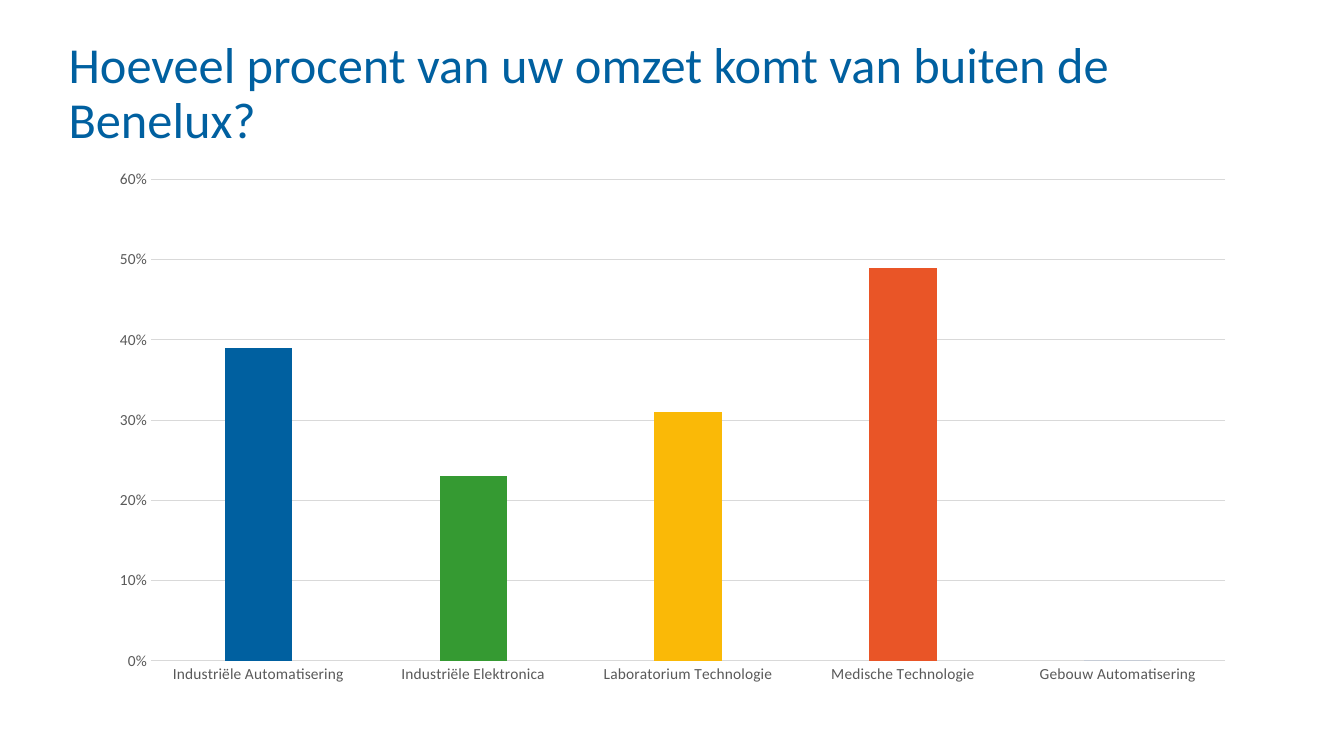
from dataclasses import dataclass
from typing import Optional

import pptx
import pptx.chart.data
import pptx.dml.color
import pptx.enum.chart
import pptx.enum.text
import pptx.util
from pptx.util import Inches


@dataclass(frozen=True)
class Theme:
    font: str = "Calibri"
    title_size: float = 36
    chart_size: float = 10
    axis_size: float = 11
    line_width: float = 0.75
    blue: str = "0060A0"
    green: str = "359A32"
    yellow: str = "FAB907"
    orange: str = "E95527"
    series: str = "4472C4"
    black: str = "000000"
    label: str = "595959"
    grid: str = "D9D9D9"


@dataclass(frozen=True)
class Market:
    name: str
    share: float
    color: Optional[str] = None


THEME = Theme()
MARKETS = [
    Market("Industriële Automatisering", 0.39, THEME.blue),
    Market("Industriële Elektronica", 0.23, THEME.green),
    Market("Laboratorium Technologie", 0.31, THEME.yellow),
    Market("Medische Technologie", 0.49, THEME.orange),
    Market("Gebouw Automatisering", 0),
]


def rgb(color: str) -> pptx.dml.color.RGBColor:
    return pptx.dml.color.RGBColor.from_string(color)


def format_font(font, *, size: float, color: str) -> None:
    font.name = THEME.font
    font.size = pptx.util.Pt(size)
    font.bold = False
    font.color.rgb = rgb(color)


def format_line(line) -> None:
    line.color.rgb = rgb(THEME.grid)
    line.width = pptx.util.Pt(THEME.line_width)


def set_text(tf, text: str, *, size: float, color: str, spacing: float = 1.0) -> None:
    tf.word_wrap = True
    tf.auto_size = pptx.enum.text.MSO_AUTO_SIZE.NONE
    tf.vertical_anchor = pptx.enum.text.MSO_ANCHOR.TOP
    tf.margin_left = tf.margin_top = tf.margin_right = tf.margin_bottom = 0
    p = tf.paragraphs[0]
    p.alignment = pptx.enum.text.PP_ALIGN.LEFT
    p.line_spacing = spacing
    p.space_before = pptx.util.Pt(0)
    r = p.add_run()
    r.text = text
    format_font(r.font, size=size, color=color)


def add_title(s, text: str) -> None:
    sp = s.shapes.title
    sp.left, sp.top = Inches(0.68), Inches(0.4)
    sp.width, sp.height = Inches(11.9), Inches(0.76)
    set_text(sp.text_frame, text, size=THEME.title_size, color=THEME.blue, spacing=0.9)


def add_market_chart(s, markets: list[Market]) -> None:
    data = pptx.chart.data.CategoryChartData(number_format="0%")
    data.categories = [m.name for m in markets]
    data.add_series("Series 1", [m.share for m in markets])
    chart = s.shapes.add_chart(
        pptx.enum.chart.XL_CHART_TYPE.COLUMN_CLUSTERED,
        Inches(0.96), Inches(1.58), Inches(11.42), Inches(5.31), data,
    ).chart
    chart.has_legend = False
    chart.has_title = False
    format_font(chart.font, size=THEME.chart_size, color=THEME.black)

    # Columns
    plot = chart.plots[0]
    plot.gap_width = 219
    plot.overlap = -27
    plot.vary_by_categories = False
    series = plot.series[0]
    series.invert_if_negative = False
    series.format.fill.solid()
    series.format.fill.fore_color.rgb = rgb(THEME.series)
    for i, market in enumerate(markets):
        if market.color:
            fill = series.points[i].format.fill
            fill.solid()
            fill.fore_color.rgb = rgb(market.color)

    # Axes
    for axis in (chart.category_axis, chart.value_axis):
        axis.major_tick_mark = pptx.enum.chart.XL_TICK_MARK.NONE
        axis.minor_tick_mark = pptx.enum.chart.XL_TICK_MARK.NONE
        format_font(axis.tick_labels.font, size=THEME.axis_size, color=THEME.label)
    format_line(chart.category_axis.format.line)
    values = chart.value_axis
    values.minimum_scale, values.maximum_scale, values.major_unit = 0, 0.6, 0.1
    values.tick_labels.number_format = "0%"
    values.tick_labels.number_format_is_linked = False
    values.format.line.fill.background()
    values.has_major_gridlines = True
    format_line(values.major_gridlines.format.line)


def main() -> None:
    prs = pptx.Presentation()
    prs.slide_width, prs.slide_height = Inches(13.33), Inches(7.5)
    s = prs.slides.add_slide(prs.slide_layouts.get_by_name("Title Only"))
    add_title(s, "Hoeveel procent van uw omzet komt van buiten de Benelux?")
    add_market_chart(s, MARKETS)
    prs.save("out.pptx")


if __name__ == "__main__":
    main()
